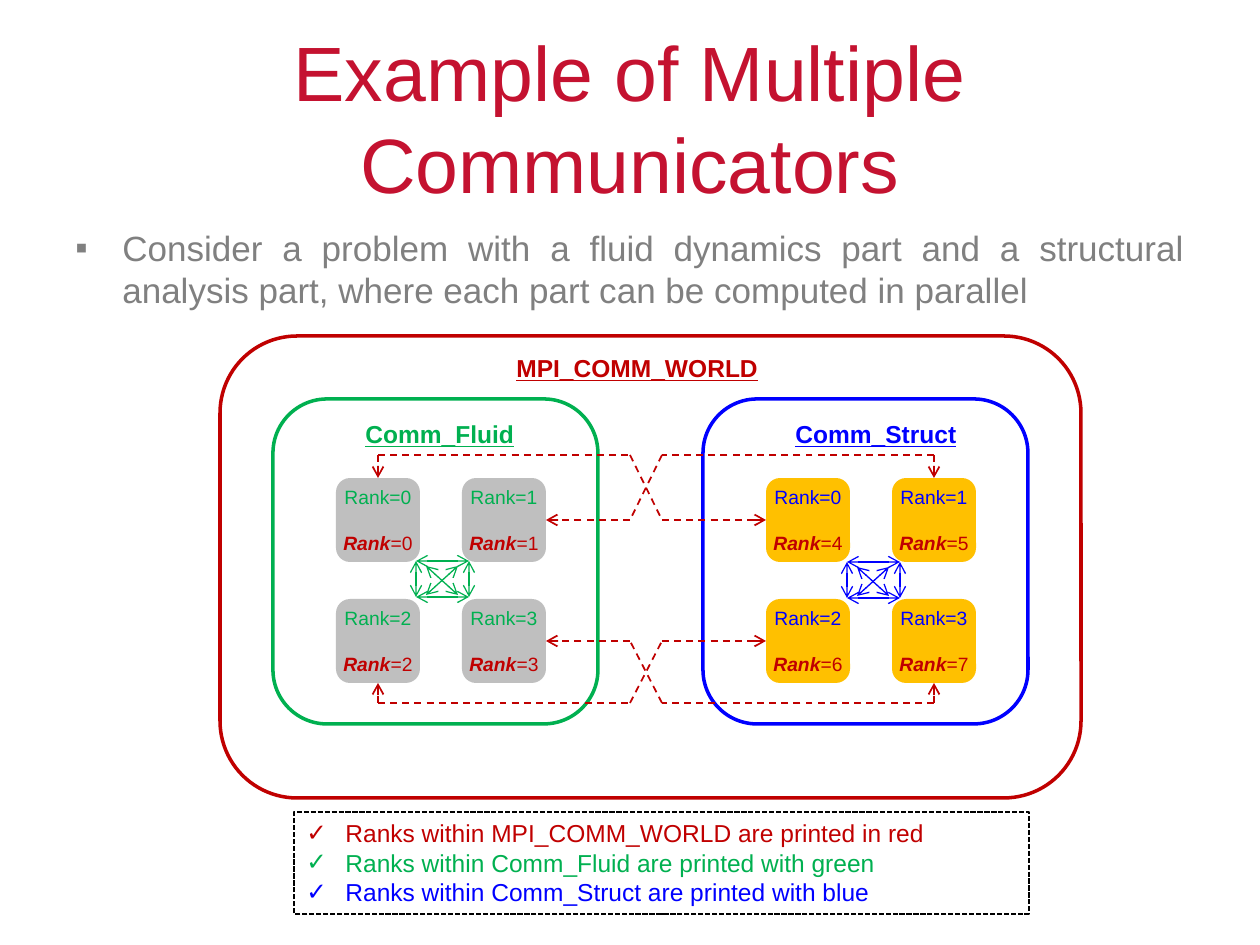
from dataclasses import dataclass

import lxml.etree
import pptx
import pptx.dml.color
import pptx.enum.dml
import pptx.enum.shapes
import pptx.enum.text
import pptx.oxml.ns
import pptx.util

ALIGN = pptx.enum.text.PP_ALIGN
ANCHOR = pptx.enum.text.MSO_ANCHOR
DASH = pptx.enum.dml.MSO_LINE
SHAPE = pptx.enum.shapes.MSO_SHAPE
TOP, LEFT, BOTTOM, RIGHT = range(4)


@dataclass(frozen=True)
class Theme:
    font: str = "Arial"
    title: str = "C41230"
    body: str = "808080"
    world: str = "C00000"
    fluid: str = "00B050"
    struct: str = "0000FF"
    fluid_tile: str = "BFBFBF"
    struct_tile: str = "FFC000"
    border: str = "000000"
    title_size: int = 44
    body_size: int = 20
    label_size: int = 14
    rank_size: int = 11


THEME = Theme()


def px(length):
    return pptx.util.Emu(round(length * 914400 / 126))


def rgb(color):
    return pptx.dml.color.RGBColor.from_string(color)


def add_element(parent, tag, **attributes):
    return lxml.etree.SubElement(parent, pptx.oxml.ns.qn(tag), attributes)


def add_span(para, text, size, color, bold=False, italic=False, underline=False):
    span = para.add_run()
    span.text = text
    font = span.font
    font.name, font.size, font.color.rgb = THEME.font, pptx.util.Pt(size), rgb(color)
    font.bold, font.italic, font.underline = bold, italic, underline


def set_bullet(para, character, indent):
    properties = para._p.get_or_add_pPr()
    properties.set("marL", str(px(indent)))
    properties.set("indent", str(-px(indent)))
    add_element(properties, "a:buFont", typeface=THEME.font)
    add_element(properties, "a:buChar", char=character)


def style_line(line, color, width, dash=None):
    line.color.rgb = rgb(color)
    line.width = pptx.util.Pt(width)
    if dash:
        line.dash_style = dash


def add_box(page, *bounds, wrap=True):
    box = page.shapes.add_textbox(*map(px, bounds))
    box.text_frame.word_wrap = wrap
    return box


def add_title(page, text):
    frame = add_box(page, 63, 38, 1134, 157).text_frame
    frame.vertical_anchor = ANCHOR.MIDDLE
    para = frame.paragraphs[0]
    para.alignment = ALIGN.CENTER
    add_span(para, text, THEME.title_size, THEME.title)


def add_body(page, text):
    para = add_box(page, 63, 220, 1134, 624).text_frame.paragraphs[0]
    set_bullet(para, "▪", 47)
    para.alignment = ALIGN.JUSTIFY
    add_span(para, text, THEME.body_size, THEME.body)


def add_label(page, text, color, *bounds):
    frame = add_box(page, *bounds, wrap=False).text_frame
    add_span(frame.paragraphs[0], text, THEME.label_size, color, bold=True, underline=True)


def add_legend(page, entries):
    box = add_box(page, 294, 812, 735, 102)
    style_line(box.line, THEME.border, 1, DASH.SQUARE_DOT)
    frame = box.text_frame
    for index, (text, color) in enumerate(entries):
        para = frame.add_paragraph() if index else frame.paragraphs[0]
        set_bullet(para, "✓", 39)
        add_span(para, text, THEME.label_size, color)


def add_round_box(page, *bounds):
    box = page.shapes.add_shape(SHAPE.ROUNDED_RECTANGLE, *map(px, bounds))
    box.shadow.inherit = False
    return box


def add_group_outline(page, color, *bounds):
    outline = add_round_box(page, *bounds)
    outline.fill.background()
    style_line(outline.line, color, 2)


def add_tile(page, x, y, local_rank, world_rank, fill, color):
    tile = add_round_box(page, x, y, 84, 84)
    tile.fill.solid()
    tile.fill.fore_color.rgb = rgb(fill)
    tile.line.fill.background()
    frame = tile.text_frame
    frame.margin_left = frame.margin_top = frame.margin_right = frame.margin_bottom = 0
    frame.vertical_anchor = ANCHOR.MIDDLE
    local, world = frame.paragraphs[0], frame.add_paragraph()
    local.alignment = world.alignment = ALIGN.CENTER
    world.space_before = pptx.util.Pt(13)
    add_span(local, f"Rank={local_rank}", THEME.rank_size, color)
    add_span(world, "Rank", THEME.rank_size, THEME.world, bold=True, italic=True)
    add_span(world, f"={world_rank}", THEME.rank_size, THEME.world)
    return tile


def add_line(page, start, end, color, width, dash=None, head=False, tail=False):
    line = page.shapes.add_connector(
        pptx.enum.shapes.MSO_CONNECTOR.STRAIGHT, *map(px, (*start, *end)))
    style_line(line.line, color, width, dash)
    outline = line.line._get_or_add_ln()
    if head:
        add_element(outline, "a:headEnd", type="arrow")
    if tail:
        add_element(outline, "a:tailEnd", type="arrow")
    add_element(line._element.spPr, "a:effectLst")
    return line


def add_communicator(page, name, x, label_width, first_rank, fill, color):
    add_group_outline(page, color, x, 399, 325, 325)
    add_label(page, name, color, x + 80, 413, label_width, 43)
    return [add_tile(page, x + 63 + 126 * (rank % 2), 478 + 121 * (rank // 2),
                     rank, first_rank + rank, fill, color)
            for rank in range(4)]


def add_mesh(page, x, y, color):
    corners = [(x, y), (x + 53, y), (x, y + 36), (x + 53, y + 36)]
    inner = [(x + 10, y + 5), (x + 42, y + 5), (x + 10, y + 34), (x + 42, y + 34)]
    for points, first, last in ((corners, 0, 1), (corners, 0, 2), (corners, 1, 3),
                                (corners, 2, 3), (inner, 0, 3), (inner, 1, 2)):
        add_line(page, points[first], points[last], color, 0.75, head=True, tail=True)


def add_route(page, source, source_site, target, target_site, points):
    stops = [points[1], points[0], *points[2:]]
    legs = [(stops[0], stops[1], source, source_site),
            (stops[0], stops[2], None, None),
            (stops[2], stops[3], None, None),
            (stops[3], stops[4], target, target_site)]
    for start, end, tile, site in legs:
        line = add_line(page, start, end, THEME.world, 1, DASH.DASH, tail=tile is not None)
        if tile is not None:
            line.end_connect(tile, site)


def add_crossing(page, fluid, struct, row, site, edge, outer, inner):
    fluid_outer, fluid_inner = fluid[2 * row:2 * row + 2]
    struct_inner, struct_outer = struct[2 * row:2 * row + 2]
    add_route(page, struct_outer, site, fluid_inner, RIGHT,
              [(934, edge), (934, outer), (662, outer), (630, inner), (546, inner)])
    add_route(page, fluid_outer, site, struct_inner, LEFT,
              [(378, edge), (378, outer), (630, outer), (662, inner), (766, inner)])


def main():
    deck = pptx.Presentation()
    deck.slide_width, deck.slide_height = px(1260), px(945)
    page = deck.slides.add_slide(deck.slide_layouts[6])
    add_title(page, "Example of Multiple Communicators")
    add_body(page, "Consider a problem with a fluid dynamics part and a structural "
                   "analysis part, where each part can be computed in parallel")
    fluid = add_communicator(page, "Comm_Fluid", 273, 175, 0, THEME.fluid_tile, THEME.fluid)
    struct = add_communicator(page, "Comm_Struct", 703, 188, 4, THEME.struct_tile, THEME.struct)
    add_crossing(page, fluid, struct, 0, TOP, 478, 455, 520)
    add_crossing(page, fluid, struct, 1, BOTTOM, 683, 703, 641)
    add_group_outline(page, THEME.world, 220, 336, 861, 462)
    add_label(page, "MPI_COMM_WORLD", THEME.world, 504, 347, 268, 43)
    add_legend(page, [
        ("Ranks within MPI_COMM_WORLD are printed in red", THEME.world),
        ("Ranks within Comm_Fluid are printed with green", THEME.fluid),
        ("Ranks within Comm_Struct are printed with blue", THEME.struct),
    ])
    add_mesh(page, 416, 561, THEME.fluid)
    add_mesh(page, 847, 562, THEME.struct)
    deck.save("out.pptx")


if __name__ == "__main__":
    main()
